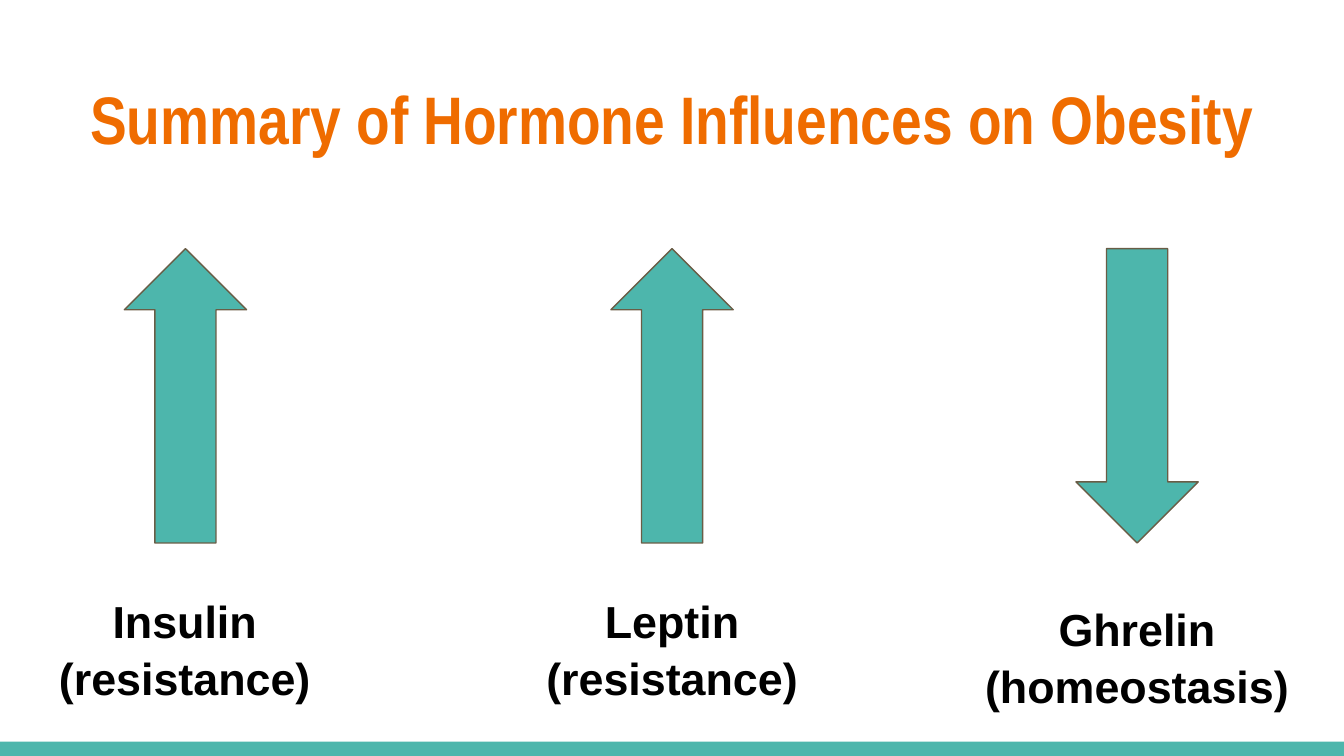
from dataclasses import dataclass

from pptx import Presentation
from pptx.dml.color import RGBColor
from pptx.enum.shapes import MSO_SHAPE
from pptx.enum.text import MSO_ANCHOR, PP_ALIGN
from pptx.util import Pt

BAR = MSO_SHAPE.RECTANGLE
ARROW = MSO_SHAPE.UP_ARROW
CENTER = PP_ALIGN.CENTER
TOP = MSO_ANCHOR.TOP
MIDDLE = MSO_ANCHOR.MIDDLE

WIDTH, HEIGHT = 720, 405
TEAL, BROWN, ORANGE, BLACK = "4DB6AC", "695D46", "EF6C00", "000000"


@dataclass
class Box:
    left: float
    top: float
    width: float
    height: float


@dataclass
class Hormone:
    lines: list[str]
    label: Box
    arrow_left: float
    turn: int = 0


HORMONES = [
    Hormone(["Insulin", "(resistance)"], Box(24.5, 309.6, 149, 43.2), 66.6),
    Hormone(["Leptin", "(resistance)"], Box(272.2, 309.6, 175.6, 43.2), 327.3),
    Hormone(["Ghrelin", "(homeostasis)"], Box(515.5, 313.9, 187.2, 71.3), 576.4, 180),
]


def color(code: str) -> RGBColor:
    return RGBColor.from_string(code)


def place(box: Box) -> list[Pt]:
    return [Pt(n) for n in (box.left, box.top, box.width, box.height)]


def add_solid(slide, kind, box: Box, line: str | None = None, turn: int = 0) -> None:
    shape = slide.shapes.add_shape(kind, *place(box))
    shape.shadow.inherit = False
    shape.rotation = turn
    shape.fill.solid()
    shape.fill.fore_color.rgb = color(TEAL)
    if line:
        shape.line.color.rgb = color(line)
        shape.line.width = Pt(0.75)
    else:
        shape.line.fill.background()


def add_text(slide, box: Box, lines: list[str], font: str, size: int,
             ink: str, anchor=TOP, spacing: float = 1.05) -> None:
    frame = slide.shapes.add_textbox(*place(box)).text_frame
    frame.word_wrap = True
    frame.vertical_anchor = anchor
    frame.margin_left = frame.margin_right = Pt(7.2)
    frame.margin_top = frame.margin_bottom = Pt(7.2)
    frame.text = "\n".join(lines)
    for para in frame.paragraphs:
        para.alignment = CENTER
        para.line_spacing = spacing
        para.font.name = font
        para.font.size = Pt(size)
        para.font.bold = True
        para.font.color.rgb = color(ink)


def main() -> None:
    deck = Presentation()
    deck.slide_width, deck.slide_height = Pt(WIDTH), Pt(HEIGHT)
    slide = deck.slides.add_slide(deck.slide_layouts[6])

    add_solid(slide, BAR, Box(0, HEIGHT - 7.6, WIDTH, 7.6))
    add_text(slide, Box(24.5, 35.3, 671, 55.4),
             ["Summary of Hormone Influences on Obesity"],
             "Arial Narrow", 36, ORANGE, MIDDLE, 1)
    for item in HORMONES:
        add_text(slide, item.label, item.lines, "Arial", 24, BLACK)
        add_solid(slide, ARROW, Box(item.arrow_left, 133.2, 65.5, 157.7),
                  BROWN, item.turn)

    deck.save("out.pptx")


if __name__ == "__main__":
    main()
